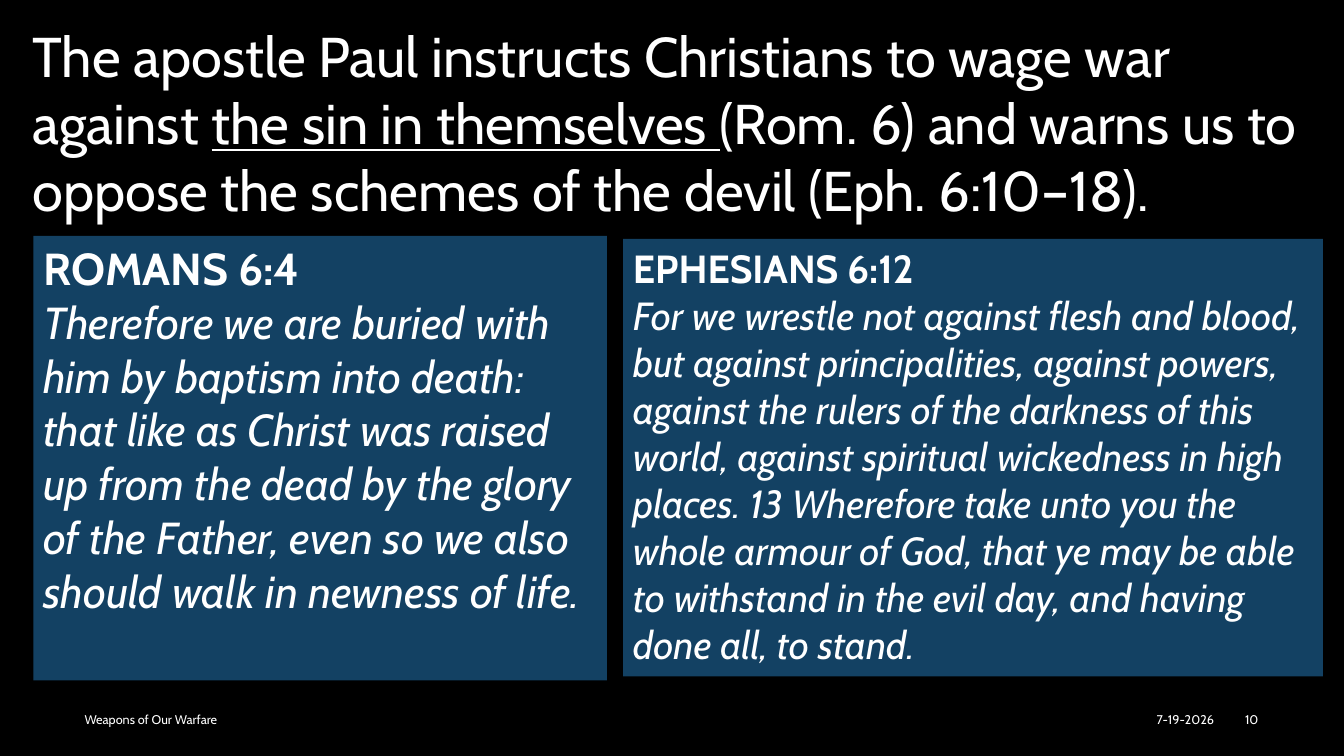
from pptx import Presentation
from pptx.dml.color import RGBColor
from pptx.enum.shapes import MSO_SHAPE
from pptx.enum.text import MSO_ANCHOR, MSO_AUTO_SIZE, PP_ALIGN
from pptx.util import Inches, Pt

BLACK = RGBColor(0x00, 0x00, 0x00)
WHITE = RGBColor(0xFF, 0xFF, 0xFF)
NAVY = RGBColor(0x13, 0x41, 0x63)
RECTANGLE = MSO_SHAPE.RECTANGLE
TOP, MIDDLE = MSO_ANCHOR.TOP, MSO_ANCHOR.MIDDLE
LEFT, RIGHT = PP_ALIGN.LEFT, PP_ALIGN.RIGHT
FIXED_SIZE = MSO_AUTO_SIZE.NONE
TITLE_ONLY = 5


def write_text(para, text, *, size, font="Cabin", color=WHITE,
               bold=False, italic=False, underline=False):
    span = para.add_run()
    span.text = text
    span.font.name = font
    span.font.size = Pt(size)
    span.font.color.rgb = color
    span.font.bold = bold
    span.font.italic = italic
    span.font.underline = underline


class ScripturePage:
    def __init__(self, deck):
        self.page = deck.slides.add_slide(deck.slide_layouts[TITLE_ONLY])
        self.page.background.fill.solid()
        self.page.background.fill.fore_color.rgb = BLACK

    def prepare_frame(self, box, anchor):
        frame = box.text_frame
        frame.word_wrap = True
        frame.auto_size = FIXED_SIZE
        frame.vertical_anchor = anchor
        return frame

    def title(self, left, top, width, height, spans, size):
        box = self.page.shapes.title
        box.left, box.top = Inches(left), Inches(top)
        box.width, box.height = Inches(width), Inches(height)
        para = self.prepare_frame(box, TOP).paragraphs[0]
        para.alignment = LEFT
        for text, underline in spans:
            write_text(para, text, size=size, underline=underline)

    def passage(self, left, top, width, height, heading, verse, size):
        panel = self.page.shapes.add_shape(
            RECTANGLE, Inches(left), Inches(top), Inches(width), Inches(height))
        panel.shadow.inherit = False
        panel.fill.solid()
        panel.fill.fore_color.rgb = NAVY
        panel.line.fill.background()
        frame = self.prepare_frame(panel, TOP)
        write_text(frame.paragraphs[0], heading, size=size, bold=True)
        write_text(frame.add_paragraph(), verse, size=size, italic=True)
        for para in frame.paragraphs:
            para.alignment = LEFT

    def footer(self, left, width, text, align):
        box = self.page.shapes.add_textbox(
            Inches(left), Inches(6.94), Inches(width), Inches(0.4))
        para = self.prepare_frame(box, MIDDLE).paragraphs[0]
        para.alignment = align
        write_text(para, text, size=9)


def main():
    deck = Presentation()
    deck.slide_width, deck.slide_height = Inches(13.33), Inches(7.5)
    page = ScripturePage(deck)

    # Title
    page.title(0.22, 0.16, 12.95, 2.79, [
        ("The apostle Paul instructs Christians to wage war against ", False),
        ("the sin in themselves ", True),
        ("(Rom. 6) and warns us to oppose the schemes of the devil "
         "(Eph. 6:10–18).", False),
    ], size=40)

    # Scripture passages
    page.passage(
        6.18, 2.37, 6.94, 4.34, "EPHESIANS 6:12",
        "For we wrestle not against flesh and blood, but against "
        "principalities, against powers, against the rulers of the darkness "
        "of this world, against spiritual wickedness in high places. "
        "13 Wherefore take unto you the whole armour of God, that ye may be "
        "able to withstand in the evil day, and having done all, to stand.",
        size=28)
    page.passage(
        0.33, 2.34, 5.69, 4.41, "ROMANS 6:4",
        "Therefore we are buried with him by baptism into death: that like "
        "as Christ was raised up from the dead by the glory of the Father, "
        "even so we also should walk in newness of life.",
        size=32)

    # Footer
    page.footer(0.74, 3, "Weapons of Our Warfare", LEFT)
    page.footer(9.73, 2.41, "7-19-2026", RIGHT)
    page.footer(12.19, 0.39, "10", RIGHT)

    deck.save("out.pptx")


if __name__ == "__main__":
    main()
